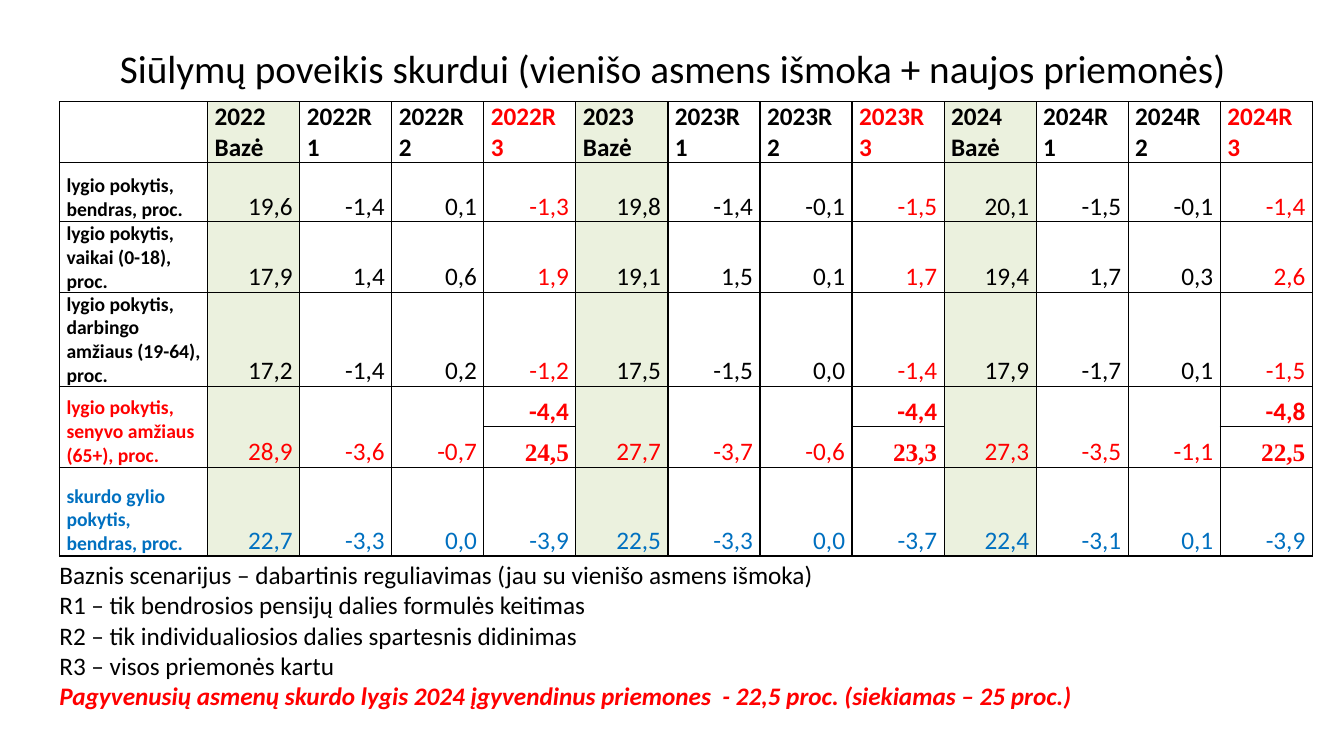
from lxml.etree import SubElement
from pptx import Presentation
from pptx.dml.color import RGBColor as Rgb
from pptx.enum.text import MSO_ANCHOR as Anchor, PP_ALIGN as Align
from pptx.oxml.ns import qn
from pptx.util import Inches, Pt

HUES = {"black": "000000", "red": "FF0000", "blue": "0070C0", "green": "EBF1DE"}
YEARS = (2022, 2023, 2024)
CASES = (" Bazė", "R1", "R2", "R3")
HEIGHTS = (0.59, 0.59, 0.59, 0.82, 0.4, 0.4, 0.88)

# Table row, label, colour, values (four cases for each year)
DATA = (
    (1, "lygio pokytis, bendras, proc.", "black",
     "19,6 -1,4 0,1 -1,3 19,8 -1,4 -0,1 -1,5 20,1 -1,5 -0,1 -1,4"),
    (2, "lygio pokytis, vaikai (0-18), proc.", "black",
     "17,9 1,4 0,6 1,9 19,1 1,5 0,1 1,7 19,4 1,7 0,3 2,6"),
    (3, "lygio pokytis, darbingo amžiaus (19-64), proc.", "black",
     "17,2 -1,4 0,2 -1,2 17,5 -1,5 0,0 -1,4 17,9 -1,7 0,1 -1,5"),
    (4, "lygio pokytis, senyvo amžiaus (65+), proc.", "red",
     "28,9 -3,6 -0,7 -4,4 27,7 -3,7 -0,6 -4,4 27,3 -3,5 -1,1 -4,8"),
    (6, "skurdo gylio pokytis, bendras, proc.", "blue",
     "22,7 -3,3 0,0 -3,9 22,5 -3,3 0,0 -3,7 22,4 -3,1 0,1 -3,9"),
)
SENIOR = 4
LEVELS = ("24,5", "23,3", "22,5")

NOTES = (
    "Baznis scenarijus – dabartinis reguliavimas (jau su vienišo asmens išmoka)",
    "R1 – tik bendrosios pensijų dalies formulės keitimas",
    "R2 – tik individualiosios dalies spartesnis didinimas",
    "R3 – visos priemonės kartu",
)
GOAL = ("Pagyvenusių asmenų skurdo lygis 2024 įgyvendinus priemones  "
        "- 22,5 proc. (siekiamas – 25 proc.)")


def add_run(para, text, size=18, hue="black", bold=False, slant=False, face="Calibri"):
    run = para.add_run()
    run.text = text
    font = run.font
    font.name, font.size, font.bold, font.italic = face, Pt(size), bold, slant
    font.color.rgb = Rgb.from_string(HUES[hue])


def add_box(slide, left, top, width, height):
    box = slide.shapes.add_textbox(*map(Inches, (left, top, width, height)))
    box.text_frame.word_wrap = True
    return box.text_frame


def style_cell(cell, tint):
    cell.margin_left = cell.margin_right = Inches(0.07)
    cell.margin_top = cell.margin_bottom = 0
    cell.vertical_anchor = Anchor.BOTTOM
    # Borders come before the fill
    props = cell._tc.get_or_add_tcPr()
    for side in ("a:lnL", "a:lnR", "a:lnT", "a:lnB"):
        line = SubElement(props, qn(side), w=str(Pt(1)))
        paint = SubElement(line, qn("a:solidFill"))
        SubElement(paint, qn("a:srgbClr"), val=HUES["black"])
    if tint:
        cell.fill.solid()
        cell.fill.fore_color.rgb = Rgb.from_string(HUES["green"])
    else:
        cell.fill.background()


def fill_cell(cell, text, align=Align.RIGHT, **look):
    para = cell.text_frame.paragraphs[0]
    para.alignment = align
    add_run(para, text, **look)


def add_grid(slide):
    count = 1 + len(YEARS) * len(CASES)
    frame = slide.shapes.add_table(len(HEIGHTS), count, Inches(0.59), Inches(1.01),
                                   Inches(12.43), Inches(sum(HEIGHTS)))
    grid = frame.table
    grid.horz_banding = grid.first_row = False
    for col, item in enumerate(grid.columns):
        item.width = Inches(0.913 if col else 1.47)
    for item, height in zip(grid.rows, HEIGHTS):
        item.height = Inches(height)
    for row in range(len(HEIGHTS)):
        for col in range(count):
            style_cell(grid.cell(row, col), col % 4 == 1)

    # Header
    heads = [f"{year}{case}" for year in YEARS for case in CASES]
    for col, head in enumerate(heads, 1):
        fill_cell(grid.cell(0, col), head, Align.LEFT, bold=True,
                  hue="black" if col % 4 else "red")

    # Only the R3 columns keep the senior row split in two
    for col in range(count):
        if col == 0 or col % 4:
            grid.cell(SENIOR, col).merge(grid.cell(SENIOR + 1, col))

    # Labels and values
    for row, label, hue, values in DATA:
        fill_cell(grid.cell(row, 0), label, Align.LEFT, size=14, hue=hue, bold=True)
        for col, value in enumerate(values.split(), 1):
            last = col % 4 == 0
            fill_cell(grid.cell(row, col), value, bold=last and row == SENIOR,
                      hue="red" if last and hue == "black" else hue)
    for year, level in enumerate(LEVELS, 1):
        fill_cell(grid.cell(SENIOR + 1, 4 * year), level, hue="red", bold=True,
                  face="Times New Roman")


def add_title(slide):
    frame = add_box(slide, 0.92, 0.4, 11.5, 0.61)
    frame.vertical_anchor = Anchor.MIDDLE
    para = frame.paragraphs[0]
    para.alignment, para.line_spacing = Align.CENTER, 0.9
    add_run(para, "Siūlymų poveikis skurdui (vienišo asmens išmoka + naujos priemonės)",
            size=28)


def add_notes(slide):
    frame = add_box(slide, 0.49, 5.5, 12.35, 1.62)
    para = frame.paragraphs[0]
    for note in NOTES:
        add_run(para, note)
        para = frame.add_paragraph()
    add_run(para, GOAL, hue="red", bold=True, slant=True)


def main():
    deck = Presentation()
    deck.slide_width, deck.slide_height = Inches(13.33), Inches(7.5)
    slide = deck.slides.add_slide(deck.slide_layouts[6])
    add_title(slide)
    add_grid(slide)
    add_notes(slide)
    deck.save("out.pptx")


if __name__ == "__main__":
    main()
